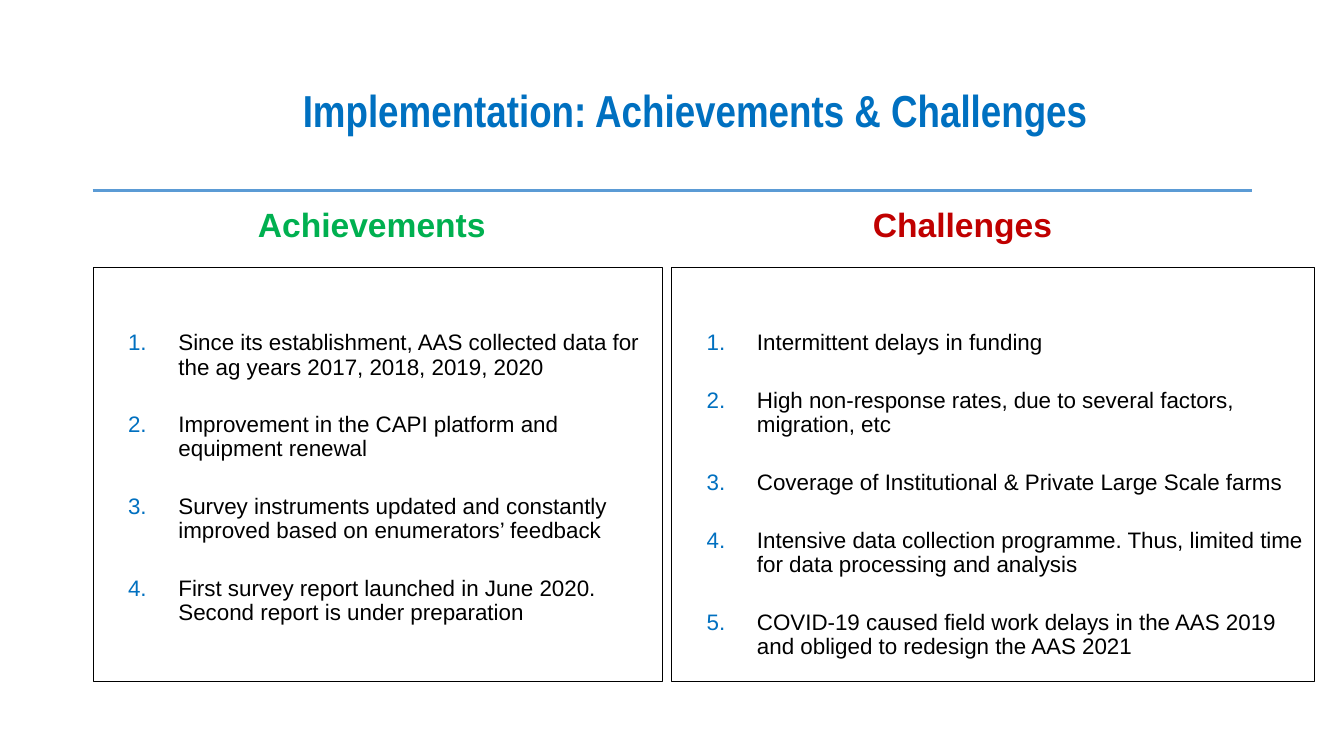
import pptx
import pptx.dml.color
import pptx.enum.shapes
import pptx.enum.text
import pptx.oxml
import pptx.oxml.ns
import pptx.util

Pt = pptx.util.Pt
LEFT = pptx.enum.text.PP_ALIGN.LEFT
CENTER = pptx.enum.text.PP_ALIGN.CENTER
TOP = pptx.enum.text.MSO_ANCHOR.TOP
MIDDLE = pptx.enum.text.MSO_ANCHOR.MIDDLE

COLOURS = {
    "title": "0070C0",
    "rule": "5B9BD5",
    "number": "0070C0",
    "text": "000000",
    "border": "000000",
    "achievements": "00B050",
    "challenges": "C00000",
}

COLUMNS = [
    {
        "heading": "Achievements",
        "colour": "achievements",
        "heading_area": (65.5, 144, 393, 40.5),
        "list_area": (66.25, 190.8, 406.8, 296),
        "items": [
            "Since its establishment, AAS collected data for the ag years 2017, 2018, 2019, 2020",
            "Improvement in the CAPI platform and equipment renewal",
            "Survey instruments updated and constantly improved based on enumerators’ feedback",
            "First survey report launched in June 2020. Second report is under preparation",
        ],
    },
    {
        "heading": "Challenges",
        "colour": "challenges",
        "heading_area": (484.5, 144, 399, 46.8),
        "list_area": (479.5, 190.8, 459.5, 296),
        "items": [
            "Intermittent delays in funding",
            "High non-response rates, due to several factors, migration, etc",
            "Coverage of Institutional & Private Large Scale farms",
            "Intensive data collection programme. Thus, limited time for data processing and analysis",
            "COVID-19 caused field work delays in the AAS 2019 and obliged to redesign the AAS 2021",
        ],
    },
]


def prepare_box(box, area, insets, anchor):
    """Place a box and set its insets (left, top, right, bottom) and anchor."""
    for name, value in zip(("left", "top", "width", "height"), area):
        setattr(box, name, Pt(value))
    frame = box.text_frame
    frame.word_wrap = True
    frame.auto_size = pptx.enum.text.MSO_AUTO_SIZE.NONE
    frame.vertical_anchor = anchor
    for side, value in zip(("left", "top", "right", "bottom"), insets):
        setattr(frame, "margin_" + side, Pt(value))
    return frame


def write_text(para, text, colour, layout, font):
    para.text = text
    for name, value in layout.items():
        setattr(para, name, value)
    for span in para.runs:
        for name, value in font.items():
            setattr(span.font, name, value)
        span.font.color.rgb = pptx.dml.color.RGBColor.from_string(COLOURS[colour])


deck = pptx.Presentation()
deck.slide_width = Pt(960)
deck.slide_height = Pt(540)
page = deck.slides.add_slide(deck.slide_layouts.get_by_name("Two Content"))

rule = page.shapes.add_connector(
    pptx.enum.shapes.MSO_CONNECTOR.STRAIGHT, Pt(66.25), Pt(136), Pt(894.25), Pt(136))
rule.line.width = Pt(2.25)
rule.line.color.rgb = pptx.dml.color.RGBColor.from_string(COLOURS["rule"])
rule._element.spPr.append(pptx.oxml.parse_xml(
    f'<a:effectLst {pptx.oxml.ns.nsdecls("a")}/>'))

title = prepare_box(page.shapes.title, (66.25, 28.8, 828, 104.4), (150, 3.6, 7.2, 3.6), MIDDLE)
write_text(title.paragraphs[0], "Implementation: Achievements & Challenges", "title",
           {"alignment": LEFT, "line_spacing": 0.9},
           {"name": "Arial Narrow", "size": Pt(32), "bold": True})

for column, list_box in zip(COLUMNS, (page.placeholders[1], page.placeholders[2])):
    heading_box = page.shapes.add_textbox(0, 0, 0, 0)
    heading = prepare_box(heading_box, column["heading_area"], (7.2, 5, 0, 3.6), TOP)
    write_text(heading.paragraphs[0], column["heading"], column["colour"],
               {"alignment": CENTER, "line_spacing": 0.9},
               {"name": "Arial", "size": Pt(24), "bold": True})

    frame = prepare_box(list_box, column["list_area"], (7.2, 46, 7.2, 3.6), TOP)
    list_box.line.width = Pt(0.25)
    list_box.line.color.rgb = pptx.dml.color.RGBColor.from_string(COLOURS["border"])
    for index, item in enumerate(column["items"]):
        para = frame.paragraphs[0] if index == 0 else frame.add_paragraph()
        properties = para._p.get_or_add_pPr()
        properties.set("marL", str(Pt(54)))
        properties.set("indent", str(Pt(-36)))
        for bullet in (
            f'<a:buClr {{}}><a:srgbClr val="{COLOURS["number"]}"/></a:buClr>',
            '<a:buFont {} typeface="Arial"/>',
            '<a:buAutoNum {} type="arabicPeriod"/>',
        ):
            properties.append(pptx.oxml.parse_xml(bullet.format(pptx.oxml.ns.nsdecls("a"))))
        write_text(para, item, "text",
                   {"alignment": LEFT, "line_spacing": 0.9, "space_after": Pt(6),
                    "space_before": Pt(18 if index else 0)},
                   {"name": "Arial", "size": Pt(16)})

deck.save("out.pptx")
